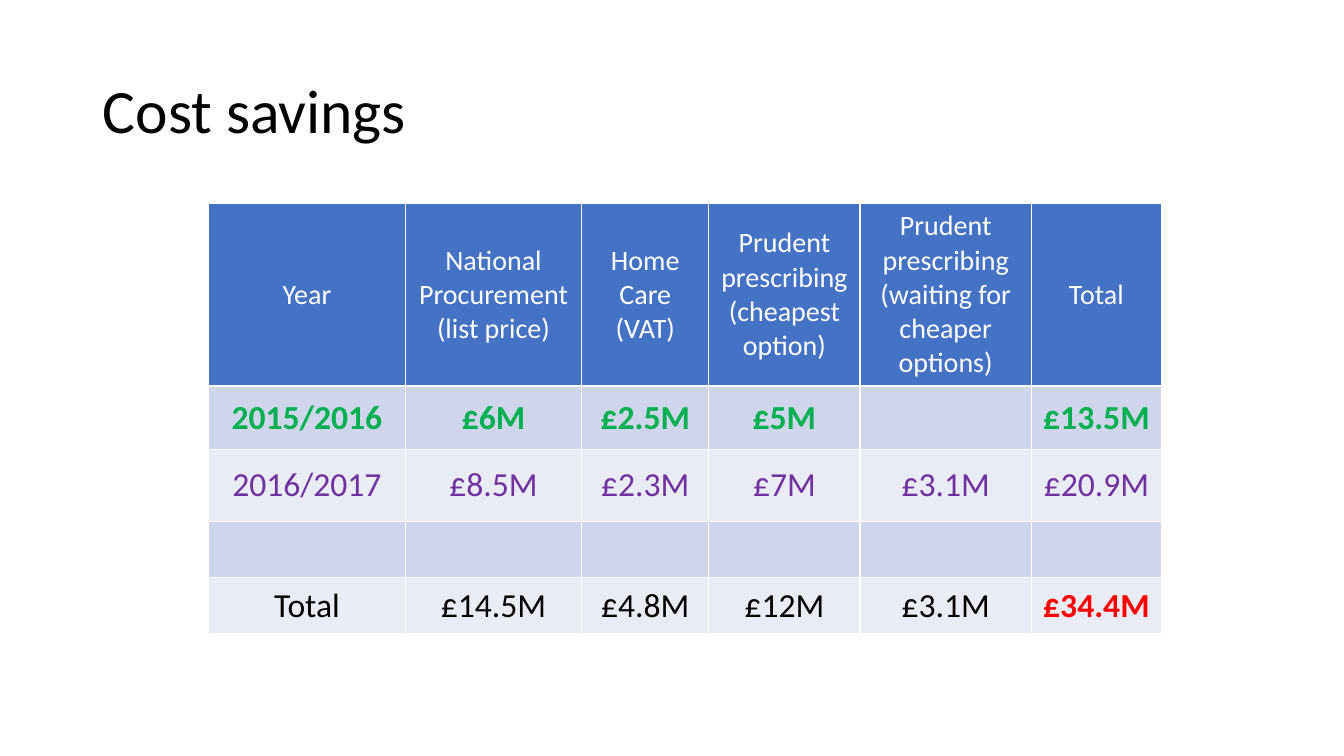
"""Build the cost savings slide with its table of yearly totals."""
from pptx import Presentation
from pptx.dml.color import RGBColor
from pptx.enum.text import MSO_ANCHOR, PP_ALIGN
from pptx.util import Inches, Pt

FONT = "Calibri"
BLACK = RGBColor(0x00, 0x00, 0x00)
WHITE = RGBColor(0xFF, 0xFF, 0xFF)
BLUE = RGBColor(0x44, 0x72, 0xC4)
DARK_BAND = RGBColor(0xCF, 0xD5, 0xEA)
LIGHT_BAND = RGBColor(0xE9, 0xEB, 0xF5)
GREEN = RGBColor(0x00, 0xB0, 0x50)
PURPLE = RGBColor(0x70, 0x30, 0xA0)
RED = RGBColor(0xFF, 0x00, 0x00)

COLUMN_WIDTHS = [1.95, 1.75, 1.26, 1.5, 1.7, 1.29]
HEADINGS = ["Year", "National Procurement (list price)", "Home Care (VAT)",
            "Prudent prescribing (cheapest option)",
            "Prudent prescribing (waiting for cheaper options)", "Total"]
ROWS = [
    (1.81, BLUE, WHITE, 20, False, HEADINGS),
    (0.63, DARK_BAND, GREEN, 24, True,
     ["2015/2016", "£6M", "£2.5M", "£5M", "", "£13.5M"]),
    (0.71, LIGHT_BAND, PURPLE, 24, False,
     ["2016/2017", "£8.5M", "£2.3M", "£7M", "£3.1M", "£20.9M"]),
    (0.56, DARK_BAND, BLACK, 24, False, [""] * len(HEADINGS)),
    (0.56, LIGHT_BAND, BLACK, 24, False,
     ["Total", "£14.5M", "£4.8M", "£12M", "£3.1M", "£34.4M"]),
]

presentation = Presentation()
presentation.slide_width = Inches(13.33)
presentation.slide_height = Inches(7.5)
slide = presentation.slides.add_slide(presentation.slide_layouts[5])

title = slide.shapes.title
title.left, title.top = Inches(0.92), Inches(0.4)
title.width, title.height = Inches(11.5), Inches(1.45)
title.text_frame.text = "Cost savings"
title.text_frame.vertical_anchor = MSO_ANCHOR.MIDDLE
paragraph = title.text_frame.paragraphs[0]
paragraph.alignment = PP_ALIGN.LEFT
paragraph.line_spacing = 0.9
paragraph.font.name = FONT
paragraph.font.size = Pt(44)
paragraph.font.color.rgb = BLACK

table = slide.shapes.add_table(
    len(ROWS), len(COLUMN_WIDTHS), Inches(2.07), Inches(2.02),
    Inches(sum(COLUMN_WIDTHS)), Inches(sum(row[0] for row in ROWS))).table
for column, width in zip(table.columns, COLUMN_WIDTHS):
    column.width = Inches(width)

for row, (height, fill, color, size, bold, texts) in zip(table.rows, ROWS):
    row.height = Inches(height)
    for cell, text in zip(row.cells, texts):
        cell.fill.solid()
        cell.fill.fore_color.rgb = fill
        cell.vertical_anchor = MSO_ANCHOR.MIDDLE
        cell.text = text
        paragraph = cell.text_frame.paragraphs[0]
        paragraph.alignment = PP_ALIGN.CENTER
        paragraph.font.name = FONT
        paragraph.font.size = Pt(size)
        paragraph.font.bold = bold
        paragraph.font.color.rgb = color

grand_total = table.cell(len(ROWS) - 1, len(COLUMN_WIDTHS) - 1)
grand_total_font = grand_total.text_frame.paragraphs[0].font
grand_total_font.bold = True
grand_total_font.color.rgb = RED

presentation.save("out.pptx")
